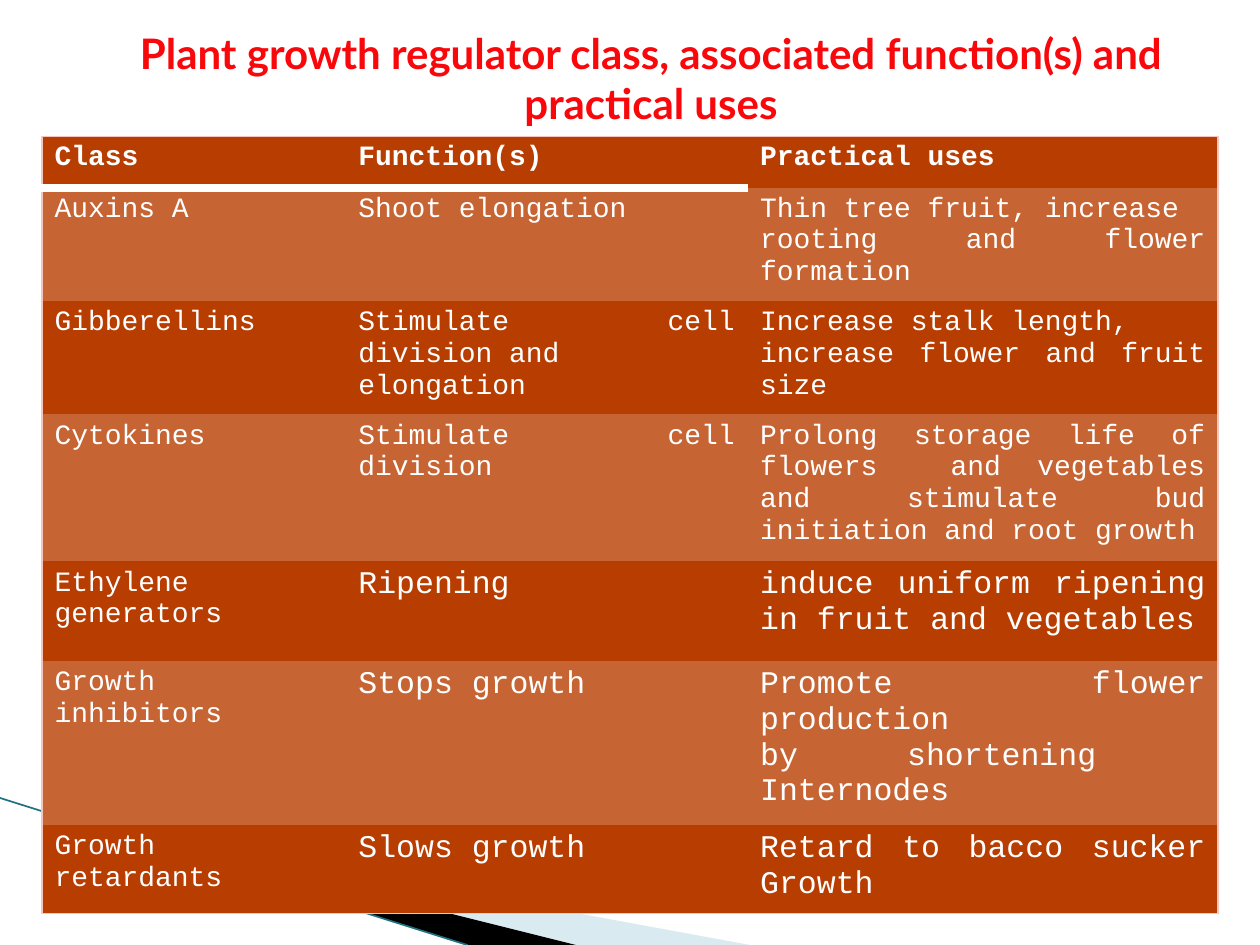
from dataclasses import dataclass

from lxml.etree import SubElement
from pptx import Presentation
from pptx.dml.color import RGBColor
from pptx.enum.shapes import MSO_CONNECTOR
from pptx.enum.text import MSO_ANCHOR, MSO_AUTO_SIZE, PP_ALIGN
from pptx.oxml.ns import qn
from pptx.util import Pt


@dataclass(frozen=True)
class Theme:
    title: str = "F8070B"
    text: str = "FFFFFF"
    row_dark: str = "B83D00"
    row_light: str = "C66433"
    edge: str = "F5C6BD"
    ribbon_pale: str = "A0CBDC"
    ribbon_dark: str = "000000"
    ribbon_line: str = "1F7080"
    title_font: str = "Lato"
    table_font: str = "Courier New"
    title_size: int = 24
    small: int = 16
    large: int = 18
    plain_style: str = "{2D5ABB26-0587-4C30-8999-92F81FD0307C}"


class SlideBuilder:
    def __init__(self, s, theme):
        self.s = s
        self.theme = theme

    def style(self, p, font, size, color, bold, align):
        p.alignment = align
        for r in p.runs:
            r.font.name = font
            r.font.size = Pt(size)
            r.font.bold = bold
            r.font.color.rgb = RGBColor.from_string(color)

    def title(self, text, x, y, w, h):
        t = self.theme
        sp = self.s.shapes.title
        sp.left, sp.top, sp.width, sp.height = Pt(x), Pt(y), Pt(w), Pt(h)
        tf = sp.text_frame
        tf.text = text
        tf.word_wrap = True
        tf.auto_size = MSO_AUTO_SIZE.SHAPE_TO_FIT_TEXT
        tf.vertical_anchor = MSO_ANCHOR.TOP
        self.style(tf.paragraphs[0], t.title_font, t.title_size, t.title, True, PP_ALIGN.CENTER)

    def ribbon(self, points, color, opacity=100):
        start, *rest = [(Pt(x), Pt(y)) for x, y in points]
        fb = self.s.shapes.build_freeform(*start)
        fb.add_line_segments(rest, close=True)
        sp = fb.convert_to_shape()
        sp.shadow.inherit = False
        sp.line.fill.background()
        sp.fill.solid()
        sp.fill.fore_color.rgb = RGBColor.from_string(color)
        if opacity < 100:
            clr = sp._element.spPr.find(qn("a:solidFill")).find(qn("a:srgbClr"))
            SubElement(clr, qn("a:alpha"), val=str(opacity * 1000))

    def line(self, x1, y1, x2, y2, color, width):
        cx = self.s.shapes.add_connector(MSO_CONNECTOR.STRAIGHT, Pt(x1), Pt(y1), Pt(x2), Pt(y2))
        cx.line.color.rgb = RGBColor.from_string(color)
        cx.line.width = Pt(width)
        SubElement(cx._element.spPr, qn("a:effectLst"))

    def border(self, cell, side, color, width):
        tcPr = cell._tc.get_or_add_tcPr()
        ln = SubElement(tcPr, qn("a:ln" + side), w=str(int(Pt(width))))
        SubElement(SubElement(ln, qn("a:solidFill")), qn("a:srgbClr"), val=color)

    def cell(self, cell, text, i, j, last_row, last_col):
        t = self.theme
        header = i == 0
        size = t.large if i >= 4 and j > 0 else t.small
        cell.text_frame.text = text
        for p in cell.text_frame.paragraphs:
            align = PP_ALIGN.LEFT if header else PP_ALIGN.JUSTIFY
            self.style(p, t.table_font, size, t.text, header, align)
        outer = {"L": j == 0, "R": j == last_col, "T": header, "B": i == last_row}
        for side, on_edge in outer.items():
            if on_edge:
                self.border(cell, side, t.edge, 0.75)
            elif side == "B" and header and j < last_col:
                self.border(cell, side, t.text, 5)
        cell.fill.solid()
        fill = t.row_light if i % 2 else t.row_dark
        cell.fill.fore_color.rgb = RGBColor.from_string(fill)

    def table(self, rows, x, y, widths, heights):
        frame = self.s.shapes.add_table(
            len(rows), len(widths), Pt(x), Pt(y), Pt(sum(widths)), Pt(sum(heights)))
        tbl = frame.table
        tbl._tbl.tblPr.find(qn("a:tableStyleId")).text = self.theme.plain_style
        for col, w in zip(tbl.columns, widths):
            col.width = Pt(w)
        for i, (row, h) in enumerate(zip(rows, heights)):
            tbl.rows[i].height = Pt(h)
            for j, text in enumerate(row):
                self.cell(tbl.cell(i, j), text, i, j, len(rows) - 1, len(widths) - 1)


REGULATORS = [
    ("Class", "Function(s)", "Practical uses"),
    ("Auxins A", "Shoot elongation",
     "Thin tree fruit, increase\nrooting and flower formation"),
    ("Gibberellins", "Stimulate cell division and\nelongation",
     "Increase stalk length,\nincrease flower and fruit size"),
    ("Cytokines", "Stimulate cell division",
     "Prolong storage life of flowers  and vegetables and stimulate bud "
     "initiation and root growth"),
    ("Ethylene generators", "Ripening",
     "induce uniform ripening in fruit and vegetables"),
    ("Growth inhibitors", "Stops growth",
     "Promote flower production\nby shortening  Internodes"),
    ("Growth retardants", "Slows growth", "Retard to bacco sucker Growth"),
]


def main():
    prs = Presentation()
    prs.slide_width, prs.slide_height = Pt(720), Pt(540)
    theme = Theme()
    b = SlideBuilder(prs.slides.add_slide(prs.slide_layouts[5]), theme)
    b.ribbon([(39.6, 468.5), (428.4, 540), (328.3, 540), (39.6, 468)], theme.ribbon_pale, 40)
    b.ribbon([(38.2, 467.3), (329, 540), (267.8, 540), (38.9, 468)], theme.ribbon_dark)
    b.line(0, 456, 267, 540, theme.ribbon_line, 0.95)
    b.title("Plant growth regulator class, associated function(s) and practical uses",
            48, 12, 648, 65.5)
    b.table(REGULATORS, 24, 77.75, [173.6, 229.6, 268.8],
            [29.5, 55.5, 60, 75, 57, 57, 32.5])
    prs.save("out.pptx")


if __name__ == "__main__":
    main()
